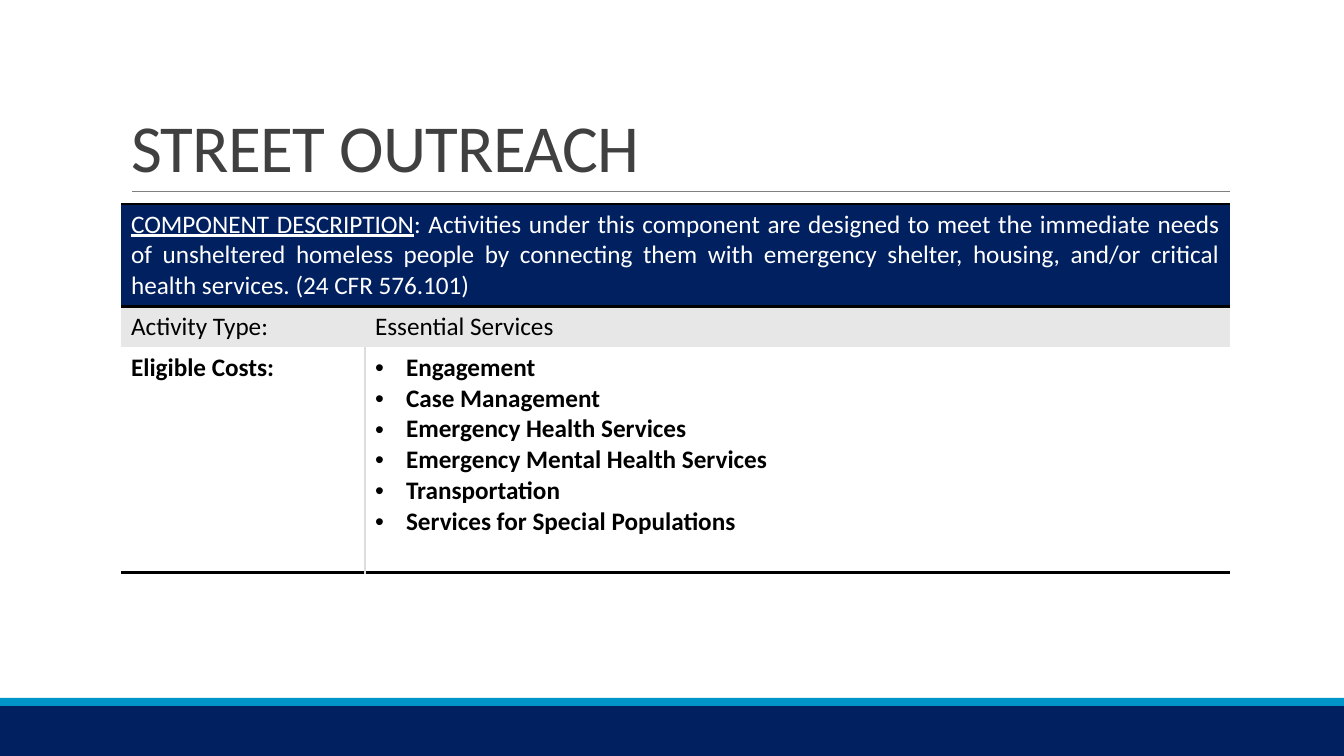
from pptx import Presentation
from pptx.dml.color import RGBColor
from pptx.enum.shapes import MSO_CONNECTOR as CONN, MSO_SHAPE as SHAPE
from pptx.enum.text import MSO_ANCHOR as ANCHOR, MSO_AUTO_SIZE as AUTO, PP_ALIGN as ALIGN
from pptx.oxml.ns import qn
from pptx.util import Pt
from lxml.etree import SubElement

# Content
TITLE = "STREET OUTREACH"
LEAD = "COMPONENT DESCRIPTION"
DESCRIPTION = (": Activities under this component are designed to meet the immediate needs "
               "of unsheltered homeless people by connecting them with emergency shelter, "
               "housing, and/or critical health services. (24 CFR 576.101)")
ACTIVITY = ("Activity Type:", "Essential Services")
COSTS_LABEL = "Eligible Costs:"
COSTS = ["Engagement", "Case Management", "Emergency Health Services",
         "Emergency Mental Health Services", "Transportation",
         "Services for Special Populations"]

FONT = "Calibri"
NAVY = RGBColor(0x00, 0x20, 0x60)
BLUE = RGBColor(0x00, 0x94, 0xC8)
DARK = RGBColor(0x40, 0x40, 0x40)
RULE = RGBColor(0x80, 0x80, 0x80)
BLACK = RGBColor(0x00, 0x00, 0x00)
WHITE = RGBColor(0xFF, 0xFF, 0xFF)
PALE = RGBColor(0xE7, 0xE7, 0xE7)
DIVIDER = RGBColor(0xDD, 0xDD, 0xDD)
NO_STYLE = "{2D5ABB26-0587-4C30-8999-92F81FD0307C}"

# Layout in px
W, H = 1344, 756
LEFT, TABLE_TOP = 121, 204
COLS, ROWS = (244, 865), (102, 41, 225)
BANDS = ((706, 50, NAVY), (698, 8, BLUE))


def px(n):
    return round(n * 12192000 / W)


def style(p, size, color, bold=False):
    for r in p.runs:
        r.font.name, r.font.size, r.font.bold = FONT, Pt(size), bold
        r.font.color.rgb = color


def border(cell, side, color, width):
    ln = SubElement(cell._tc.get_or_add_tcPr(), qn(f"a:ln{side}"), w=str(Pt(width)))
    SubElement(SubElement(ln, qn("a:solidFill")), qn("a:srgbClr"), val=str(color))


def bullet(p):
    pPr = p._p.get_or_add_pPr()
    pPr.set("marL", str(px(31)))
    pPr.set("indent", str(-px(31)))
    SubElement(pPr, qn("a:buFont"), typeface="Arial")
    SubElement(pPr, qn("a:buChar"), char="•")


prs = Presentation()
prs.slide_width, prs.slide_height = px(W), px(H)
s = prs.slides.add_slide(prs.slide_layouts[5])

# Footer bands
for top, height, color in BANDS:
    sp = s.shapes.add_shape(SHAPE.RECTANGLE, 0, px(top), px(W), px(height))
    sp.shadow.inherit = False
    sp.fill.solid()
    sp.fill.fore_color.rgb = color
    sp.line.fill.background()

# Rule under the title
rule = s.shapes.add_connector(CONN.STRAIGHT, px(132), px(191), px(1230), px(191))
rule.line.color.rgb, rule.line.width = RULE, Pt(0.5)
SubElement(rule._element.spPr, qn("a:effectLst"))

# Title
title = s.shapes.title
title.left, title.top, title.width, title.height = px(LEFT), px(31), px(sum(COLS)), px(160)
tf = title.text_frame
tf.text = TITLE
tf.auto_size, tf.word_wrap, tf.vertical_anchor = AUTO.NONE, True, ANCHOR.BOTTOM
p = tf.paragraphs[0]
p.alignment, p.line_spacing = ALIGN.LEFT, 0.85
style(p, 48, DARK)
p.runs[0]._r.get_or_add_rPr().set("spc", "-50")

# Table
frame = s.shapes.add_table(len(ROWS), len(COLS), px(LEFT), px(TABLE_TOP),
                           px(sum(COLS)), px(sum(ROWS)))
table = frame.table
table._tbl.tblPr.find(qn("a:tableStyleId")).text = NO_STYLE
table.first_row = table.horz_banding = False
for col, width in zip(table.columns, COLS):
    col.width = px(width)
for row, height in zip(table.rows, ROWS):
    row.height = px(height)

# Cell text
head = table.cell(0, 0)
head.merge(table.cell(0, 1))
p = head.text_frame.paragraphs[0]
p.alignment = ALIGN.JUSTIFY
for text in (LEAD, DESCRIPTION):
    p.add_run().text = text
p.runs[0].font.underline = True
for i, text in enumerate(ACTIVITY):
    table.cell(1, i).text = text
table.cell(2, 0).text = COSTS_LABEL
costs = table.cell(2, 1)
costs.text = "\n".join(COSTS)
for p in costs.text_frame.paragraphs:
    bullet(p)

# Borders
border(table.cell(2, 0), "R", DIVIDER, 2.25)
border(costs, "L", DIVIDER, 2.25)
for i in range(len(COLS)):
    for side in "TB":
        border(table.cell(0, i), side, BLACK, 2)
    border(table.cell(2, i), "B", BLACK, 2)

# Fills and fonts by row
for row, fill, color, bold in zip(table.rows, (NAVY, PALE, WHITE),
                                  (WHITE, BLACK, BLACK), (False, False, True)):
    for cell in row.cells:
        cell.fill.solid()
        cell.fill.fore_color.rgb = fill
        for p in cell.text_frame.paragraphs:
            style(p, 18, color, bold)

prs.save("out.pptx")
